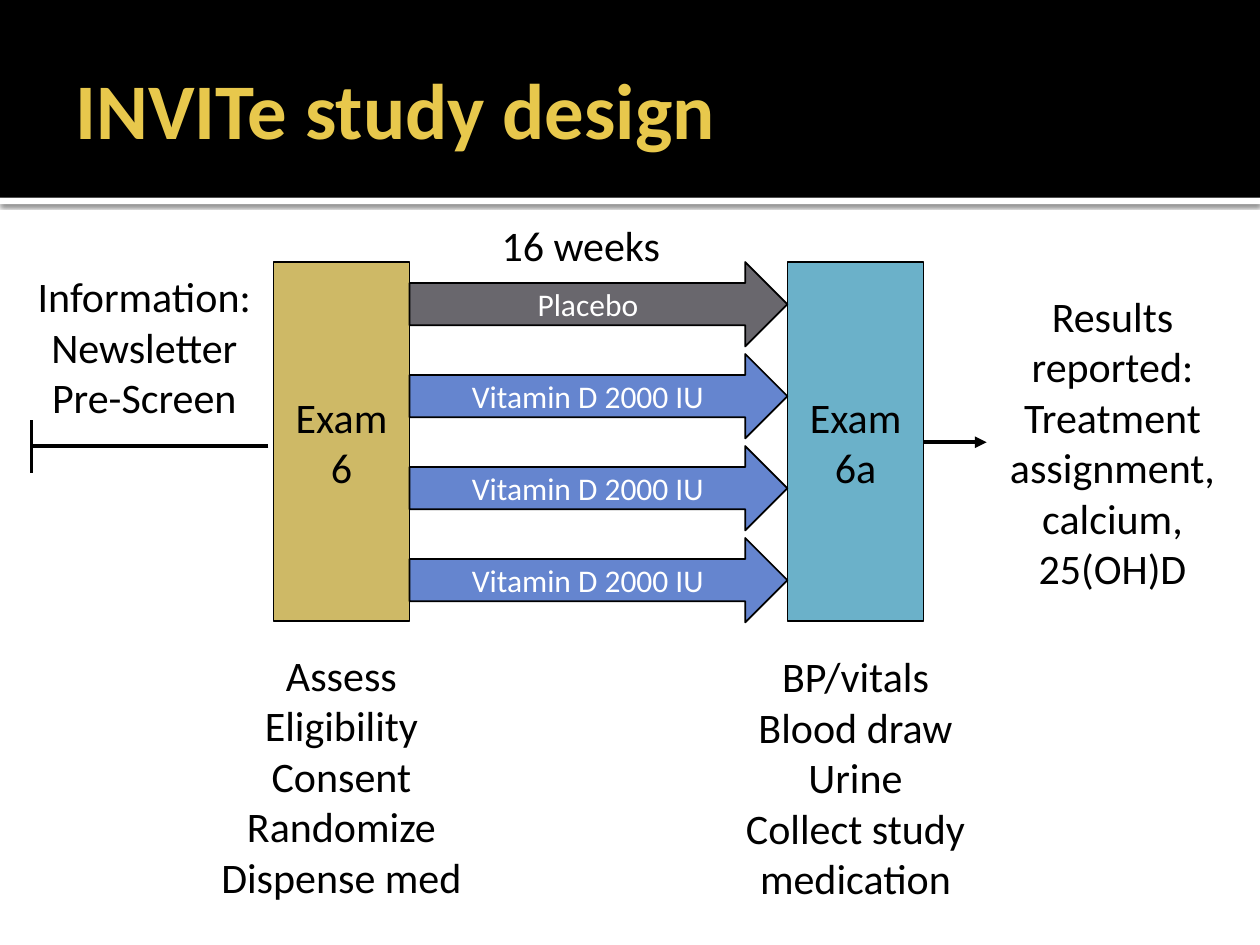
from lxml import etree
from pptx import Presentation
from pptx.dml.color import RGBColor
from pptx.enum.shapes import MSO_CONNECTOR, MSO_SHAPE
from pptx.enum.text import MSO_ANCHOR, PP_ALIGN
from pptx.oxml import parse_xml
from pptx.oxml.ns import nsdecls, qn
from pptx.util import Inches, Pt

RECTANGLE, RIGHT_ARROW = MSO_SHAPE.RECTANGLE, MSO_SHAPE.RIGHT_ARROW
STRAIGHT = MSO_CONNECTOR.STRAIGHT
MIDDLE = MSO_ANCHOR.MIDDLE
LEFT, CENTER = PP_ALIGN.LEFT, PP_ALIGN.CENTER

BLACK = RGBColor(0x00, 0x00, 0x00)
WHITE = RGBColor(0xFF, 0xFF, 0xFF)
YELLOW = RGBColor(0xE8, 0xC8, 0x4C)
GOLD = RGBColor(0xCE, 0xB9, 0x66)
TEAL = RGBColor(0x6B, 0xB1, 0xC9)
GRAY = RGBColor(0x69, 0x67, 0x6D)
BLUE = RGBColor(0x65, 0x85, 0xCF)

BODY_FONT = {"name": "Calibri", "size": Pt(24), "bold": False}
TITLE_FONT = {"name": "Calibri", "size": Pt(45), "bold": True}
ARROW_FONT = {"name": "Calibri", "size": Pt(18), "bold": False}

# Study diagram
EXAM_TOP, EXAM_WIDTH, EXAM_HEIGHT = 2.08, 1.08, 2.85
FIRST_EXAM_LEFT, SECOND_EXAM_LEFT = 2.17, 6.25
ARM_LEFT, ARM_WIDTH, ARM_HEIGHT, ARM_PITCH = 3.25, 3, 0.67, 0.73
ARMS = [("Placebo", GRAY)] + [("Vitamin D 2000 IU", BLUE)] * 3

# Captions: box in inches, then paragraphs
CAPTIONS = [
    ((0, 2, 2.29, 1.5), ["Information:", "Newsletter", "Pre-Screen"]),
    ((7.83, 2.08, 2, 2.85),
     ["Results reported:", "Treatment assignment, calcium, 25(OH)D"]),
    ((1.59, 5.08, 2.24, 2.15),
     ["Assess", "Eligibility", "Consent", "Randomize", "Dispense med"]),
    ((5.67, 5.09, 2.24, 2.15),
     ["BP/vitals", "Blood draw", "Urine", "Collect study medication"]),
    ((3.49, 1.72, 2.24, 0.44), ["16 weeks"]),
]


def write_text(shape, lines, font_format, color, alignment=CENTER):
    frame = shape.text_frame
    frame.word_wrap = True
    frame.vertical_anchor = MIDDLE
    for index, line in enumerate(lines):
        paragraph = frame.add_paragraph() if index else frame.paragraphs[0]
        paragraph.alignment = alignment
        run = paragraph.add_run()
        run.text = line
        for name, value in font_format.items():
            setattr(run.font, name, value)
        run.font.color.rgb = color


def add_block(slide, kind, box, fill, outlined=True):
    shape = slide.shapes.add_shape(kind, *map(Inches, box))
    shape.shadow.inherit = False
    shape.fill.solid()
    shape.fill.fore_color.rgb = fill
    if outlined:
        shape.line.color.rgb = BLACK
        shape.line.width = Pt(1)
    else:
        shape.line.fill.background()
    return shape


def add_text(slide, box, lines, font_format=BODY_FONT, color=BLACK,
             alignment=CENTER):
    shape = slide.shapes.add_textbox(*map(Inches, box))
    write_text(shape, lines, font_format, color, alignment)
    return shape


def add_line(slide, start, end, arrowhead=False):
    connector = slide.shapes.add_connector(
        STRAIGHT, *map(Inches, (*start, *end)))
    connector.line.color.rgb = BLACK
    connector.line.width = Pt(2.25)
    if arrowhead:
        outline = connector.line._ln
        etree.SubElement(outline, qn("a:tailEnd"), type="triangle")
    etree.SubElement(connector._element.spPr, qn("a:effectLst"))


def add_drop_shadow(shape):
    effects = shape._element.spPr.find(qn("a:effectLst"))
    effects.append(parse_xml(
        f'<a:outerShdw {nsdecls("a")} blurRad="{Pt(2.5)}" dist="{Pt(0.8)}" '
        'dir="5400000" algn="t" rotWithShape="0"><a:srgbClr val="000000">'
        '<a:alpha val="60000"/></a:srgbClr></a:outerShdw>'))


def add_header(slide):
    rule = add_block(slide, RECTANGLE, (0, 1.57, 10, 0.05), WHITE, False)
    add_drop_shadow(rule)
    add_block(slide, RECTANGLE, (0, 0, 10, 1.57), BLACK, False)
    title = add_text(slide, (0.5, 0.17, 9, 1.37), ["INVITe study design"],
                     TITLE_FONT, YELLOW, LEFT)
    title.text_frame.margin_right = Inches(0.05)


def add_exam(slide, left, label, fill):
    box = (left, EXAM_TOP, EXAM_WIDTH, EXAM_HEIGHT)
    exam = add_block(slide, RECTANGLE, box, fill)
    write_text(exam, [label], BODY_FONT, BLACK)


def add_arms(slide):
    for index, (label, fill) in enumerate(ARMS):
        top = EXAM_TOP + index * ARM_PITCH
        arm = add_block(slide, RIGHT_ARROW,
                        (ARM_LEFT, top, ARM_WIDTH, ARM_HEIGHT), fill)
        write_text(arm, [label], ARROW_FONT, WHITE)


def main():
    presentation = Presentation()
    presentation.slide_width = Inches(10)
    presentation.slide_height = Inches(7.5)
    slide = presentation.slides.add_slide(presentation.slide_layouts[6])

    add_header(slide)

    # Exams and treatment arms
    add_exam(slide, FIRST_EXAM_LEFT, "Exam 6", GOLD)
    add_exam(slide, SECOND_EXAM_LEFT, "Exam 6a", TEAL)
    add_arms(slide)

    # Lead-in bar and results arrow
    add_line(slide, (2.13, 3.54), (0.25, 3.54))
    add_line(slide, (0.25, 3.75), (0.25, 3.33))
    add_line(slide, (7.33, 3.51), (7.83, 3.51), arrowhead=True)

    for box, lines in CAPTIONS:
        add_text(slide, box, lines)

    presentation.save("out.pptx")


if __name__ == "__main__":
    main()
